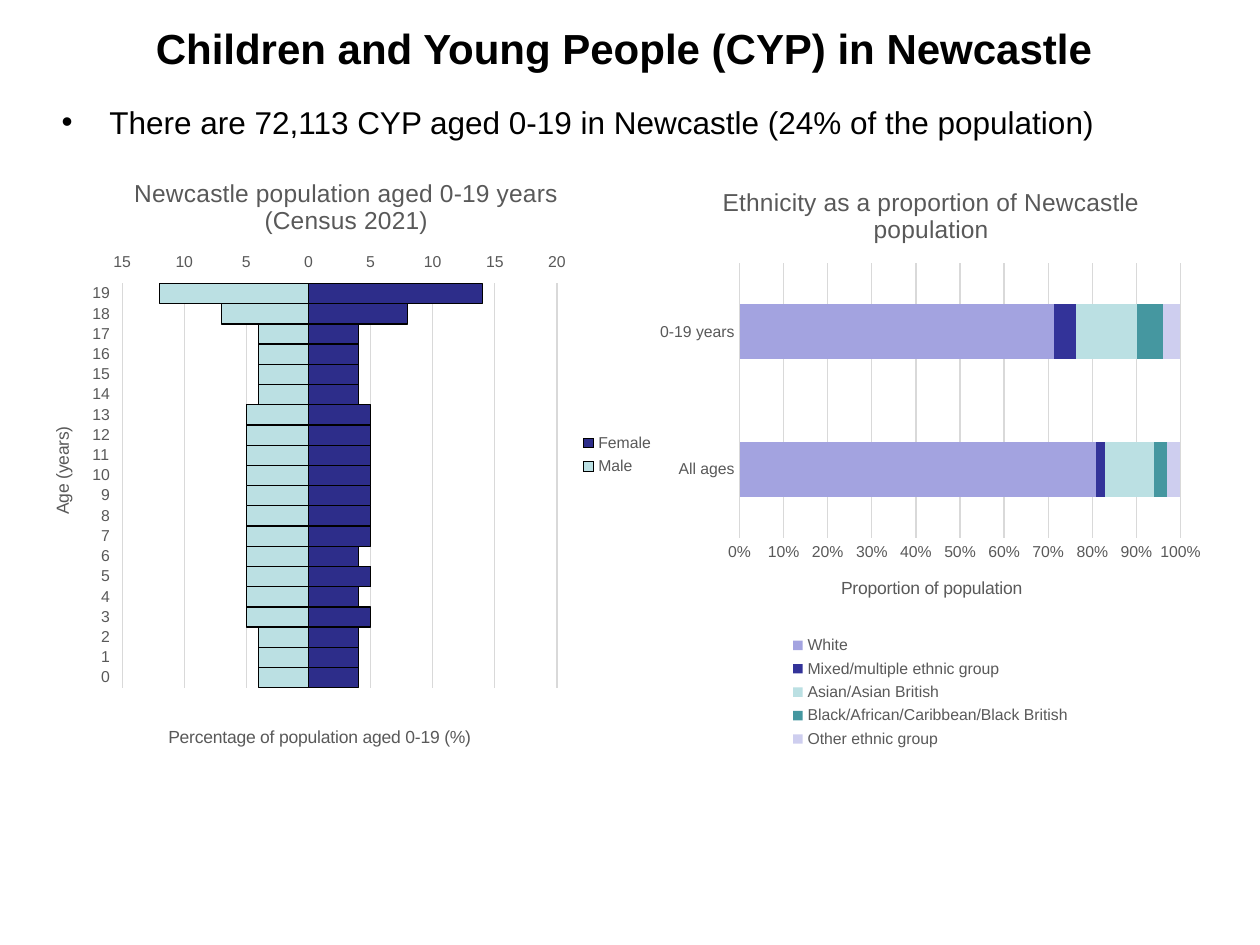
from lxml import etree
from pptx import Presentation, util as u
from pptx.chart.data import CategoryChartData
from pptx.dml.color import RGBColor
from pptx.enum import chart as ch, text as tx
from pptx.oxml.ns import qn

GREY, GRID = "595959", "D9D9D9"
PYRAMID = {
    "Male": ("BBE0E3", [-4, -4, -4, -5, -5, -5, -5, -5, -5, -5,
                        -5, -5, -5, -5, -4, -4, -4, -4, -7, -12]),
    "Female": ("2D2D8A", [4, 4, 4, 5, 4, 5, 4, 5, 5, 5,
                          5, 5, 5, 5, 4, 4, 4, 4, 8, 14]),
}
ETHNICITY = {
    "White": ("A3A3E0", [80, 72]),
    "Mixed/multiple ethnic group": ("333399", [2, 5]),
    "Asian/Asian British": ("BBE0E3", [11, 14]),
    "Black/African/Caribbean/Black British": ("4597A0", [3, 6]),
    "Other ethnic group": ("CECEEF", [3, 4]),
}
PYRAMID_BOX = (0.2, 1.23, 5.09, 4.76)
ETHNICITY_BOX = (5.16, 1.31, 4.46, 4.68)


def colour(value):
    return RGBColor.from_string(value)


def apply(target, formats):
    for name, value in formats.items():
        setattr(target, name, value)


def place(element, box, inches, after=None):
    for old in element.findall(qn("c:layout")):
        element.remove(old)
    layout = etree.Element(qn("c:layout"))
    manual = etree.SubElement(layout, qn("c:manualLayout"))
    shares = [length / side for length, side in zip(inches, box[2:] * 2)]
    parts = {"xMode": "edge", "yMode": "edge", **dict(zip("xywh", shares))}
    if after is None:
        parts = {"layoutTarget": "inner", **parts}
    for tag, value in parts.items():
        etree.SubElement(manual, qn("c:" + tag)).set("val", str(value))
    if after is None:
        element.insert(0, layout)
    else:
        element.find(qn(after)).addnext(layout)


class SlideBuilder:
    """Holds the text style and the slide that is being filled."""

    def __init__(self, slide, font="Arial"):
        self.slide = slide
        self.font = font

    def style(self, font, size, hue, bold=False):
        apply(font, {"name": self.font, "size": u.Pt(size), "bold": bold})
        font.color.rgb = colour(hue)

    def text(self, wording, box, size, bold=False, bullet=False, **formats):
        frame = self.slide.shapes.add_textbox(*map(u.Inches, box)).text_frame
        apply(frame, {"word_wrap": True, **formats})
        paragraph = frame.paragraphs[0]
        paragraph.text = wording
        if bullet:
            properties = paragraph._p.get_or_add_pPr()
            properties.set("marL", str(u.Inches(0.38)))
            properties.set("indent", str(-u.Inches(0.38)))
            etree.SubElement(properties, qn("a:buFont")).set("typeface", self.font)
            etree.SubElement(properties, qn("a:buChar")).set("char", "•")
        else:
            paragraph.alignment = tx.PP_ALIGN.CENTER
        self.style(paragraph.runs[0].font, size, "000000", bold)

    def heading(self, title, wording, size, box, position):
        title.text_frame.text = wording
        self.style(title.text_frame.paragraphs[0].runs[0].font, size, GREY)
        place(title._element, box, position, "c:tx")

    def bars(self, kind, box, categories, groups, title, plot_area, gap, legend_side, outline=None):
        data = CategoryChartData()
        data.categories = categories
        for name, (_, values) in groups.items():
            data.add_series(name, values)
        chart = self.slide.shapes.add_chart(kind, *map(u.Inches, box), data).chart
        self.style(chart.font, 10, "000000")
        wording, position = title
        self.heading(chart.chart_title, wording, 14, box, position)
        place(chart._chartSpace.chart.plotArea, box, plot_area)
        plot = chart.plots[0]
        apply(plot, {"gap_width": gap, "overlap": 100, "vary_by_categories": False})
        for series, (hue, _) in zip(plot.series, groups.values()):
            series.invert_if_negative = False
            series.format.fill.solid()
            series.format.fill.fore_color.rgb = colour(hue)
            if outline:
                series.format.line.color.rgb = colour(outline)
                series.format.line.width = u.Pt(0.75)
        chart.has_legend = True
        apply(chart.legend, {"position": legend_side, "include_in_layout": False})
        self.style(chart.legend.font, 9, GREY)
        for axis in (chart.category_axis, chart.value_axis):
            apply(axis, {"major_tick_mark": ch.XL_TICK_MARK.NONE,
                         "minor_tick_mark": ch.XL_TICK_MARK.NONE})
            self.style(axis.tick_labels.font, 9, GREY)
        chart.value_axis.format.line.fill.background()
        chart.value_axis.has_major_gridlines = True
        for line in (chart.category_axis.format.line, chart.value_axis.major_gridlines.format.line):
            line.color.rgb = colour(GRID)
            line.width = u.Pt(0.75)
        return chart

    def scale(self, axis, low, high, step, number_format):
        apply(axis, {"minimum_scale": low, "maximum_scale": high, "major_unit": step})
        apply(axis.tick_labels, {"number_format": number_format,
                                 "number_format_is_linked": False})


def main():
    deck = Presentation()
    apply(deck, {"slide_width": u.Inches(10), "slide_height": u.Inches(7.5)})
    builder = SlideBuilder(deck.slides.add_slide(deck.slide_layouts[6]))
    builder.text("There are 72,113 CYP aged 0-19 in Newcastle (24% of the population)",
                 (0.39, 0.77, 9.13, 1.07), 18, bullet=True)
    builder.text("Children and Young People (CYP) in Newcastle\u00a0", (0.5, 0.03, 9, 0.69), 24,
                 bold=True, vertical_anchor=tx.MSO_ANCHOR.MIDDLE)

    pyramid = builder.bars(
        ch.XL_CHART_TYPE.BAR_CLUSTERED, PYRAMID_BOX, [str(age) for age in range(20)],
        PYRAMID, ("Newcastle population aged 0-19 years (Census 2021)", (0.83, 0.14)),
        (0.77, 1.02, 3.45, 3.21), 0, ch.XL_LEGEND_POSITION.RIGHT, "000000")
    builder.scale(pyramid.value_axis, -15, 20, 5, "General;General")
    pyramid.value_axis.tick_label_position = ch.XL_TICK_LABEL_POSITION.HIGH
    pyramid.category_axis.tick_label_position = ch.XL_TICK_LABEL_POSITION.LOW
    builder.heading(pyramid.category_axis.axis_title, "Age (years)", 10, PYRAMID_BOX, (0.18, 2.13))
    builder.heading(pyramid.value_axis.axis_title, "Percentage of population aged 0-19 (%)",
                    10, PYRAMID_BOX, (1.11, 4.5))

    ethnicity = builder.bars(
        ch.XL_CHART_TYPE.BAR_STACKED_100, ETHNICITY_BOX, ["All ages", "0-19 years"],
        ETHNICITY, ("Ethnicity as a proportion of Newcastle population", (0.54, 0.13)),
        (0.71, 0.78, 3.5, 2.18), 150, ch.XL_LEGEND_POSITION.BOTTOM)
    builder.scale(ethnicity.value_axis, 0, 1, 0.1, "0%")
    builder.heading(ethnicity.value_axis.axis_title, "Proportion of population", 10,
                    ETHNICITY_BOX, (1.49, 3.24))
    place(ethnicity.legend._element, ETHNICITY_BOX, (1.09, 3.7, 2.27, 0.97), "c:legendPos")
    deck.save("out.pptx")


if __name__ == "__main__":
    main()
